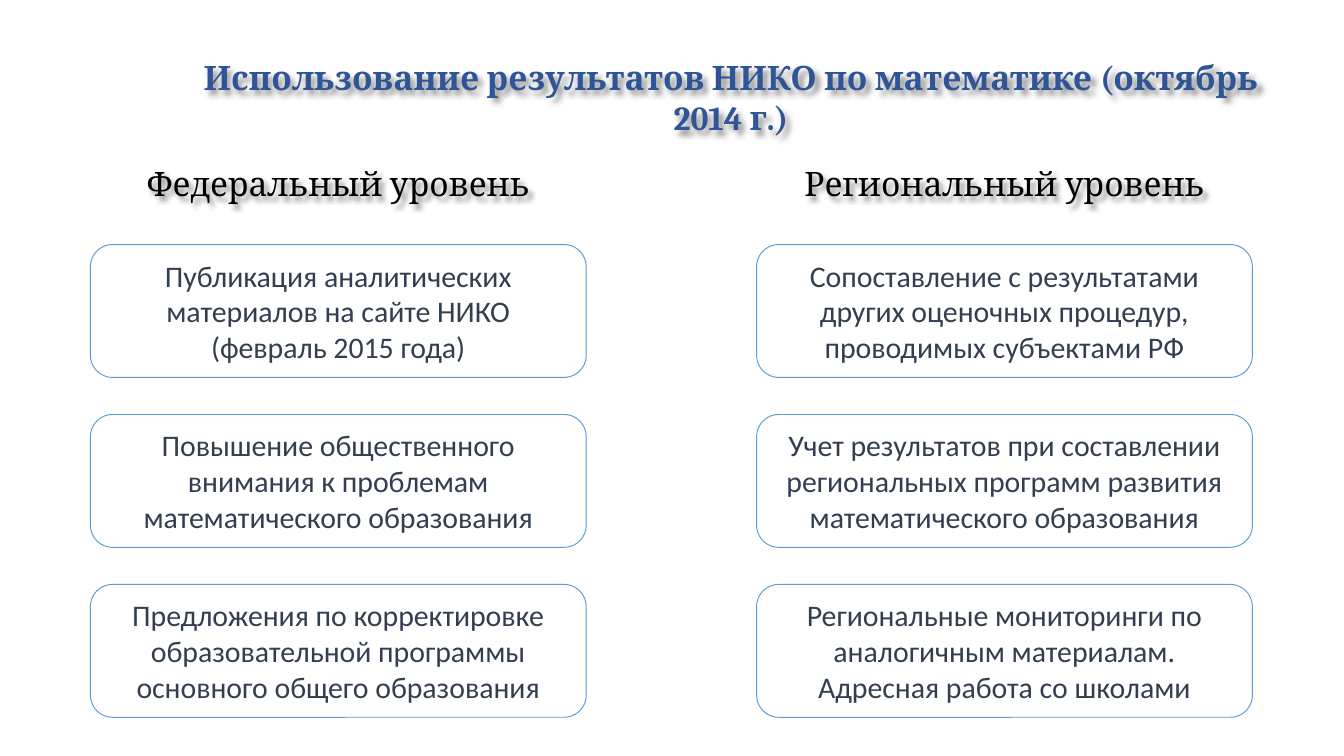
from pptx import Presentation
from pptx.dml.color import RGBColor
from pptx.enum.shapes import MSO_SHAPE
from pptx.enum.text import MSO_ANCHOR, MSO_AUTO_SIZE, PP_ALIGN
from pptx.oxml import parse_xml
from pptx.util import Cm, Pt

ROUNDED = MSO_SHAPE.ROUNDED_RECTANGLE
TOP, MIDDLE = MSO_ANCHOR.TOP, MSO_ANCHOR.MIDDLE
CENTER = PP_ALIGN.CENTER
NO_FIT = MSO_AUTO_SIZE.NONE

# Content
TITLE = "Использование результатов НИКО по математике (октябрь 2014 г.)"
LEVELS = [
    ("Федеральный уровень", [
        "Публикация аналитических материалов на сайте НИКО (февраль 2015 года)",
        "Повышение общественного внимания к проблемам математического образования",
        "Предложения по корректировке образовательной программы "
        "основного общего образования",
    ]),
    ("Региональный уровень", [
        "Сопоставление с результатами других оценочных процедур, "
        "проводимых субъектами РФ",
        "Учет результатов при составлении региональных программ развития "
        "математического образования",
        "Региональные мониторинги по аналогичным материалам. "
        "Адресная работа со школами",
    ]),
]

# Theme: (font, size, colour, bold)
THEME = {
    "title": ("Cambria", 18, "2F5597", True),
    "heading": ("Cambria", 18, "000000", False),
    "card": ("Calibri", 16, "333F50", False),
    "card_fill": "FFFFFF",
    "card_line": "5B9BD5",
}

# Grid, in cm
LEFT, COLUMN_STEP = 1.71, 12.59
CARD_TOP, ROW_STEP = 4.62, 3.21
CARD_W, CARD_H = 9.37, 2.51
HEADING_TOP, HEADING_H = 2.95, 1.02

SHADOW = (
    '<a:effectLst xmlns:a="http://schemas.openxmlformats.org/drawingml/2006/main">'
    '<a:outerShdw blurRad="38100" dist="38100" dir="2700000" algn="tl">'
    '<a:srgbClr val="000000"><a:alpha val="43000"/></a:srgbClr>'
    '</a:outerShdw></a:effectLst>'
)


def write(sp, text, style, anchor):
    font, size, color, bold = THEME[style]
    tf = sp.text_frame
    tf.word_wrap = True
    tf.auto_size = NO_FIT
    tf.vertical_anchor = anchor
    p = tf.paragraphs[0]
    p.text = text
    p.alignment = CENTER
    p.font.name, p.font.size, p.font.bold = font, Pt(size), bold
    p.font.color.rgb = RGBColor.from_string(color)


def add_shadow(sp):
    sp.element.spPr.append(parse_xml(SHADOW))


def add_heading(s, x, text):
    sp = s.shapes.add_textbox(Cm(x), Cm(HEADING_TOP), Cm(CARD_W), Cm(HEADING_H))
    write(sp, text, "heading", TOP)
    add_shadow(sp)


def add_card(s, x, y, text):
    sp = s.shapes.add_shape(ROUNDED, Cm(x), Cm(y), Cm(CARD_W), Cm(CARD_H))
    sp.shadow.inherit = False
    sp.fill.solid()
    sp.fill.fore_color.rgb = RGBColor.from_string(THEME["card_fill"])
    sp.line.color.rgb = RGBColor.from_string(THEME["card_line"])
    sp.line.width = Pt(0.5)
    write(sp, text, "card", MIDDLE)


prs = Presentation()
prs.slide_width, prs.slide_height = Cm(25.4), Cm(14.28)
s = prs.slides.add_slide(prs.slide_layouts[5])

# Title
title = s.shapes.title
title.left, title.top, title.width, title.height = Cm(3.3), Cm(0.94), Cm(21.03), Cm(1.02)
write(title, TITLE, "title", TOP)
add_shadow(title)

# Level columns with their cards
for col, (heading, cards) in enumerate(LEVELS):
    x = LEFT + col * COLUMN_STEP
    add_heading(s, x, heading)
    for row, text in enumerate(cards):
        add_card(s, x, CARD_TOP + row * ROW_STEP, text)

prs.save("out.pptx")
